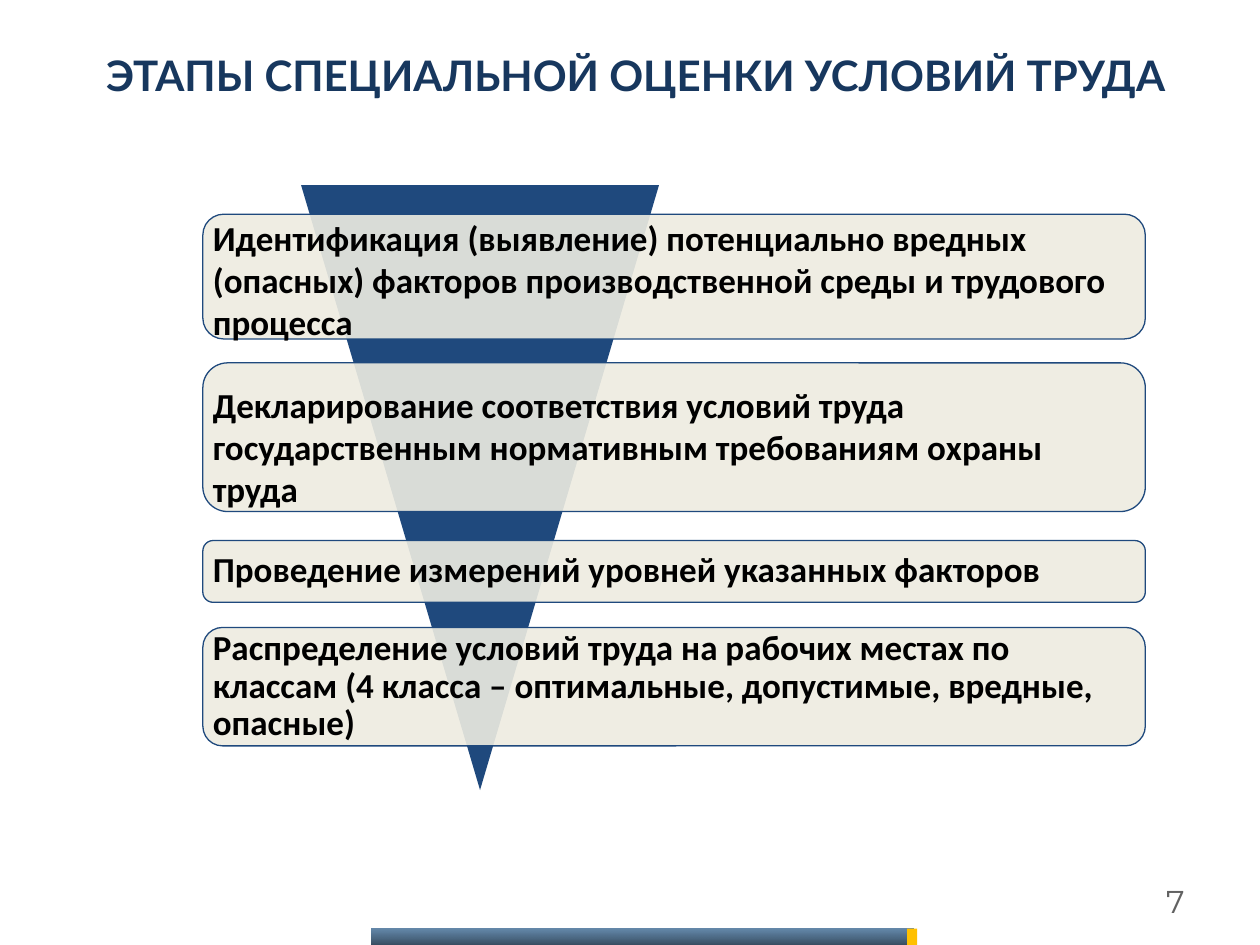
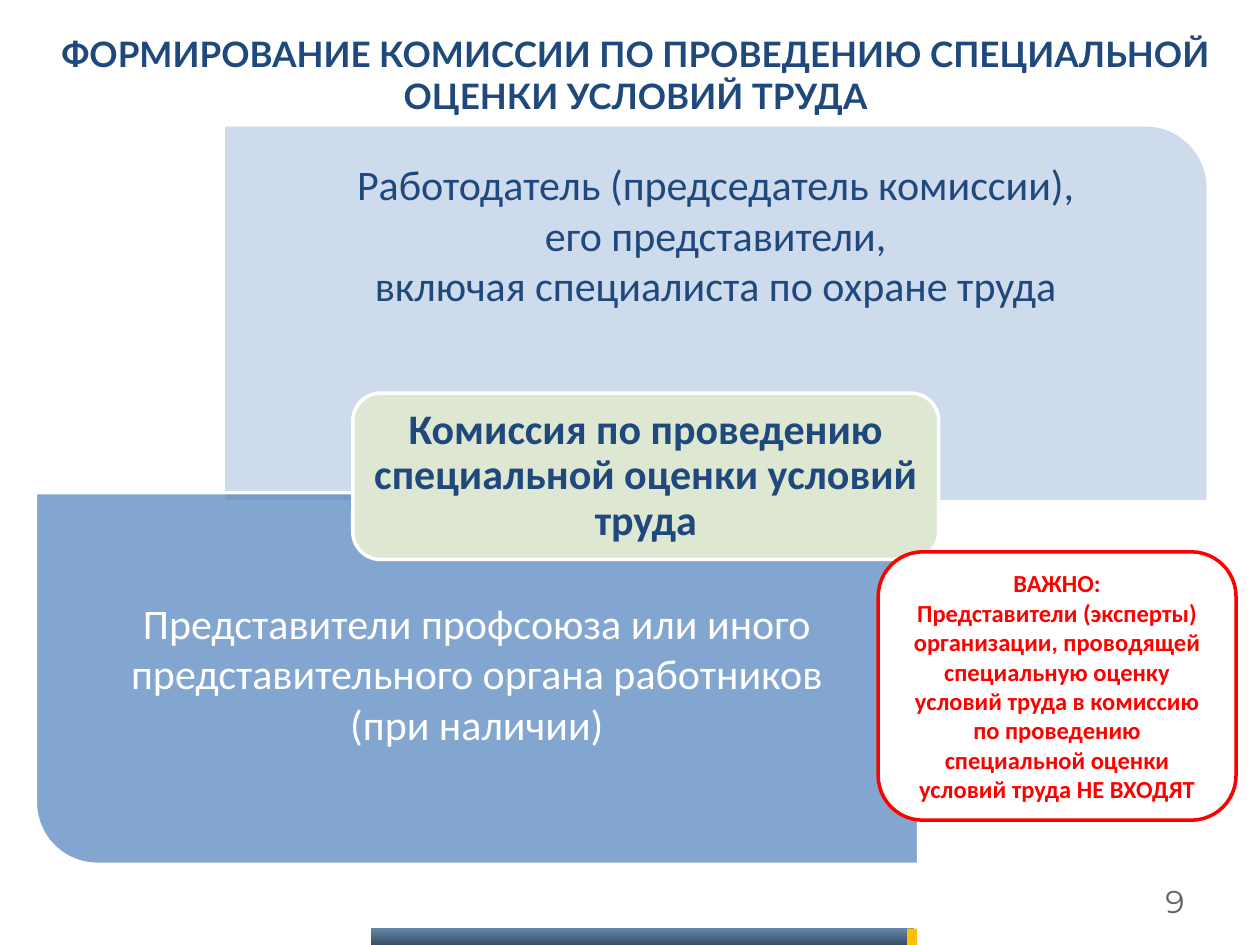
import pptx
import pptx.util
import pptx.dml.color
import pptx.enum.shapes
import pptx.enum.text
import pptx.oxml
import pptx.oxml.ns

Inches = pptx.util.Inches
Pt = pptx.util.Pt
Kind = pptx.enum.shapes.MSO_SHAPE
Align = pptx.enum.text.PP_ALIGN

NAVY, BLUE, WHITE, RED = "17375E", "1F497D", "FFFFFF", "FF0000"
GREY, BLACK, BEIGE, AMBER = "626262", "000000", "EEECE1", "FFC000"
PALE, MID, GREEN = "B9CDE5", "4F81BD", "DEE7D1"


def rgb(code):
    return pptx.dml.color.RGBColor.from_string(code)


def fade(item, *shares):
    nodes = list(item.element.spPr.iter(pptx.oxml.ns.qn("a:srgbClr")))
    for node, share in zip(nodes, shares):
        node.append(pptx.oxml.parse_xml(
            f'<a:alpha {pptx.oxml.ns.nsdecls("a")} val="{share * 1000}"/>'))


class Deck:
    """Holds the shared style and the current slide."""

    def __init__(self):
        self.show = pptx.Presentation()
        self.show.slide_width, self.show.slide_height = Inches(10), Inches(7.5)
        self.slide = None

    def page(self, title, number, box, size, color):
        self.slide = self.show.slides.add_slide(self.show.slide_layouts[6])
        self.label((8.94, 6.95, 0.56, 0.4), [str(number)], 18, GREY, "Montserrat", align=Align.RIGHT)
        self.label(box, [title], size, color, "Lato", bold=True)
        band = self.shape(Kind.RECTANGLE, (2.95, 7.37, 4.3, 0.13))
        band.fill.gradient()
        band.fill.gradient_angle = 270
        for stop, code in zip(band.fill.gradient_stops, ("003C73", "001C35")):
            stop.color.rgb = rgb(code)
        fade(band, 60, 80)
        self.shape(Kind.RECTANGLE, (7.2, 7.37, 0.08, 0.13), AMBER)

    def shape(self, kind, box, fill=None, share=100, line=None, width=2, turn=0):
        item = self.slide.shapes.add_shape(kind, *map(Inches, box))
        item.shadow.inherit = False
        item.rotation = turn
        if fill:
            item.fill.solid()
            item.fill.fore_color.rgb = rgb(fill)
            if share < 100:
                fade(item, share)
        if line:
            item.line.color.rgb = rgb(line)
            item.line.width = Pt(width)
        else:
            item.line.fill.background()
        return item

    def letter(self, item, lines, size, color, font="Calibri", bold=False,
               align=Align.CENTER, space=1.0):
        frame = item.text_frame
        frame.word_wrap = True
        frame.vertical_anchor = pptx.enum.text.MSO_ANCHOR.MIDDLE
        frame.text = "\n".join(lines)
        for para in frame.paragraphs:
            para.alignment = align
            para.line_spacing = space
            for run in para.runs:
                run.font.name, run.font.size, run.font.bold = font, Pt(size), bold
                run.font.color.rgb = rgb(color)

    def label(self, box, lines, size, color, font="Calibri", **style):
        item = self.slide.shapes.add_textbox(*map(Inches, box))
        self.letter(item, lines, size, color, font, **style)

    def card(self, box, text, size, color, pad, look, drop=0, **style):
        item = self.shape(Kind.ROUNDED_RECTANGLE, box, **look)
        frame = item.text_frame
        side = pad - 0.049 * box[3]
        frame.margin_left = frame.margin_right = Inches(side)
        frame.margin_top, frame.margin_bottom = Inches(drop), 0
        self.letter(item, [text], size, color, bold=True, **style)

    def panel(self, box, fill, turn, area, lines, color):
        self.shape(Kind.ROUND_1_RECTANGLE, box, fill, 70, WHITE, turn=turn)
        self.label(area, lines, 24, color)


def stages(deck):
    deck.page("ЭТАПЫ СПЕЦИАЛЬНОЙ ОЦЕНКИ УСЛОВИЙ ТРУДА", 7, (0.2, 0.36, 9.69, 0.47), 24, NAVY)
    deck.shape(Kind.ISOSCELES_TRIANGLE, (2.39, 1.47, 2.84, 4.8), BLUE, turn=180)
    look = dict(fill=BEIGE, share=90, line=BLUE, width=0.75)
    steps = [
        (1.7, 0.99, 0.04, 1.0, "Идентификация (выявление) потенциально вредных (опасных) "
                               "факторов производственной среды и трудового процесса"),
        (2.88, 1.18, 0.14, 1.0, "Декларирование соответствия условий труда государственным "
                                "нормативным требованиям охраны труда"),
        (4.29, 0.49, 0, 0.9, "Проведение измерений уровней указанных факторов"),
        (4.98, 0.94, 0, 0.9, "Распределение условий труда на рабочих местах по классам "
                             "(4 класса – оптимальные, допустимые, вредные, опасные)"),
    ]
    for top, high, drop, space, text in steps:
        deck.card((1.61, top, 7.48, high), text, 20, BLACK, 0.08, look, drop,
                  align=Align.LEFT, space=space)


def board(deck):
    deck.page("ФОРМИРОВАНИЕ КОМИССИИ ПО ПРОВЕДЕНИЮ СПЕЦИАЛЬНОЙ ОЦЕНКИ УСЛОВИЙ ТРУДА", 9,
              (0.2, 0.28, 9.69, 0.63), 20, BLUE)
    deck.panel((1.77, 0.99, 7.82, 2.99), PALE, 0, (1.77, 0.99, 7.82, 1.74),
               ["Работодатель (председатель комиссии),", "его представители,",
                "включая специалиста по охране труда"], BLUE)
    deck.panel((0.28, 3.91, 7.01, 2.95), MID, 180, (0.28, 4.65, 7.01, 1.38),
               ["Представители профсоюза или иного представительного органа работников",
                "(при наличии)"], WHITE)
    deck.card((2.8, 3.12, 4.65, 1.32), "Комиссия по проведению специальной оценки условий труда",
              24, BLUE, 0.1, dict(fill=GREEN, line=WHITE), space=0.9)
    note = deck.shape(Kind.ROUNDED_RECTANGLE, (6.97, 4.38, 2.84, 2.13), WHITE, line=RED)
    deck.letter(note, ["ВАЖНО:", "Представители (эксперты) организации, проводящей специальную "
                       "оценку условий труда в комиссию по проведению специальной оценки "
                       "условий труда НЕ ВХОДЯТ"], 14, RED, bold=True)


def main():
    deck = Deck()
    stages(deck)
    board(deck)
    deck.show.save("out.pptx")


if __name__ == "__main__":
    main()
